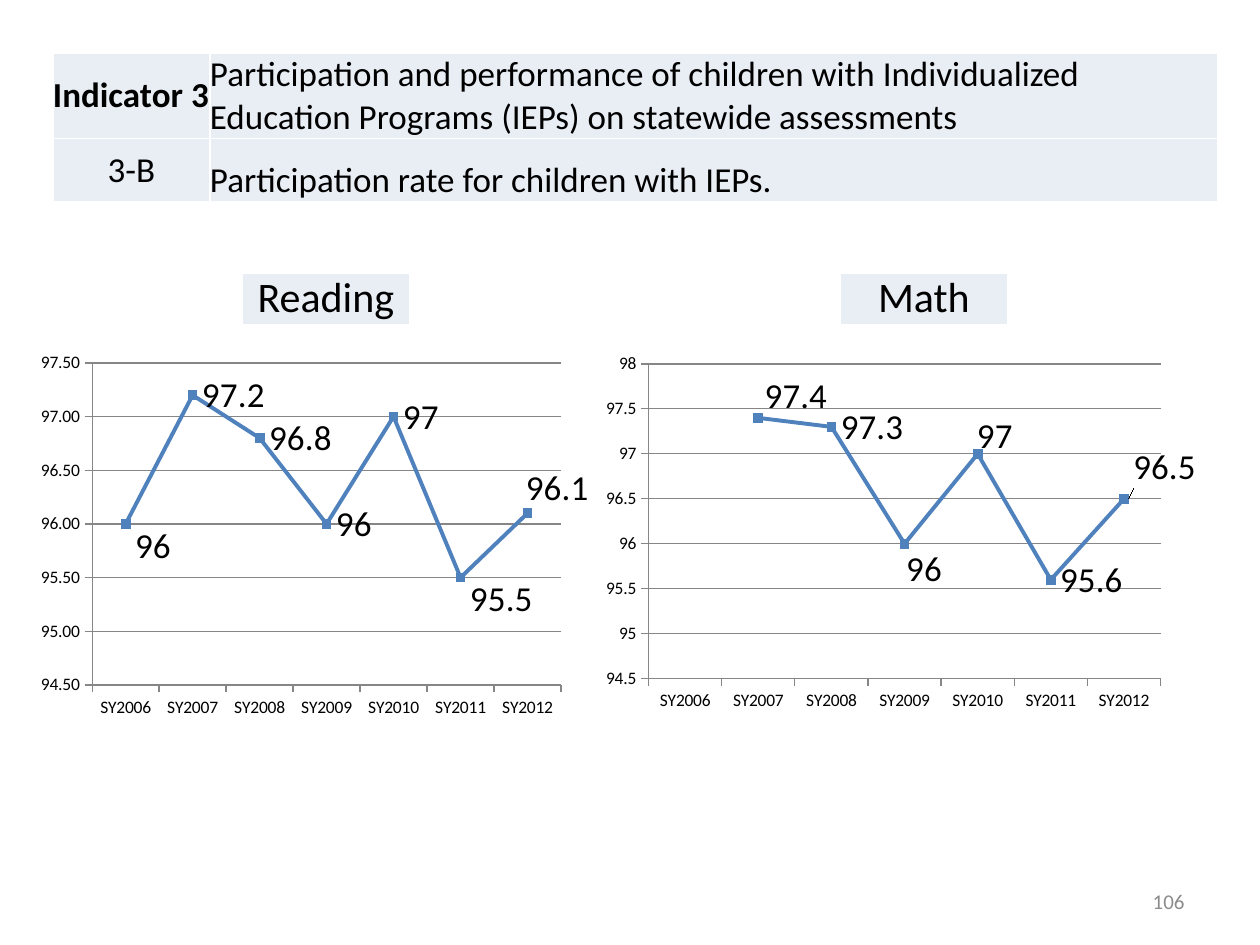
import pptx
import pptx.chart.data
import pptx.dml.color
import pptx.enum.chart
import pptx.enum.text
import pptx.oxml
import pptx.oxml.ns
import pptx.util

BLACK = pptx.dml.color.RGBColor(0x00, 0x00, 0x00)
GREY = pptx.dml.color.RGBColor(0x8C, 0x8C, 0x8C)
AXIS_GREY = pptx.dml.color.RGBColor(0x86, 0x86, 0x86)
PALE_BLUE = pptx.dml.color.RGBColor(0xE9, 0xED, 0xF4)
BLUE = pptx.dml.color.RGBColor(0x4F, 0x81, 0xBD)

FONT = "Calibri"
PX = 914400 // 126
ALIGN = pptx.enum.text.PP_ALIGN
ANCHOR = pptx.enum.text.MSO_ANCHOR
YEARS = [f"SY{year}" for year in range(2006, 2013)]


class SlideBuilder:
    """Holds the style and the current slide."""

    def __init__(self, slide):
        self.slide = slide

    def scale(self, *lengths):
        return [pptx.util.Emu(length * PX) for length in lengths]

    def style_font(self, font, size, color=BLACK, bold=False):
        font.name = FONT
        font.size = pptx.util.Pt(size)
        font.color.rgb = color
        font.bold = bold

    def table(self, left, top, columns, heights, rows, size):
        """Each cell is (text, alignment, anchor, bold)."""
        frame = self.slide.shapes.add_table(
            len(heights), len(columns),
            *self.scale(left, top, sum(columns), sum(heights)))
        table = frame.table
        table.first_row = table.horz_banding = False
        for column, width in zip(table.columns, self.scale(*columns)):
            column.width = width
        for row, height, cells in zip(table.rows, self.scale(*heights), rows):
            row.height = height
            for cell, (text, align, anchor, bold) in zip(row.cells, cells):
                cell.fill.solid()
                cell.fill.fore_color.rgb = PALE_BLUE
                cell.margin_left = cell.margin_right = 0
                cell.margin_top = cell.margin_bottom = 0
                cell.vertical_anchor = anchor
                cell.text = text
                para = cell.text_frame.paragraphs[0]
                para.alignment = align
                self.style_font(para.font, size, bold=bold)

    def text(self, left, top, width, height, text, size, color, align):
        box = self.slide.shapes.add_textbox(*self.scale(left, top, width, height))
        box.text_frame.word_wrap = True
        box.text_frame.vertical_anchor = ANCHOR.MIDDLE
        para = box.text_frame.paragraphs[0]
        para.text = text
        para.alignment = align
        self.style_font(para.font, size, color)

    def layout_xml(self, body):
        return pptx.oxml.parse_xml(
            f'<c:layout {pptx.oxml.ns.nsdecls("c")}>'
            f"<c:manualLayout>{body}</c:manualLayout></c:layout>")

    def line_chart(self, left, top, width, height, values, maximum,
                   axis_format, plot_box, label_shifts):
        """plot_box is in slide px; label_shifts maps a point to (dx, dy) px."""
        data = pptx.chart.data.CategoryChartData()
        data.categories = YEARS
        data.add_series("Series 1", values)
        chart = self.slide.shapes.add_chart(
            pptx.enum.chart.XL_CHART_TYPE.LINE_MARKERS,
            *self.scale(left, top, width, height), data).chart
        chart.has_legend = chart.has_title = False
        self.style_font(chart.font, 10)

        # Axes and gridlines
        axis = chart.value_axis
        axis.minimum_scale, axis.maximum_scale = 94.5, maximum
        axis.major_unit = 0.5
        axis.tick_labels.number_format = axis_format
        axis.tick_labels.number_format_is_linked = False
        for line in (axis.format.line, axis.major_gridlines.format.line,
                     chart.category_axis.format.line):
            line.color.rgb = AXIS_GREY
            line.width = pptx.util.Pt(0.75)
        for each in (axis, chart.category_axis):
            each.major_tick_mark = pptx.enum.chart.XL_TICK_MARK.OUTSIDE

        # Line and markers
        plot = chart.plots[0]
        plot.vary_by_categories = False
        series = plot.series[0]
        series.smooth = False
        series.format.line.color.rgb = BLUE
        series.format.line.width = pptx.util.Pt(2.25)
        series.marker.style = pptx.enum.chart.XL_MARKER_STYLE.SQUARE
        series.marker.size = 5
        series.marker.format.fill.solid()
        series.marker.format.fill.fore_color.rgb = BLUE
        series.marker.format.line.color.rgb = BLUE

        # Value labels, some moved off the line
        right = pptx.enum.chart.XL_LABEL_POSITION.RIGHT
        labels = series.data_labels
        labels.show_value = True
        labels.position = right
        self.style_font(labels.font, 20)
        for index, (dx, dy) in label_shifts.items():
            label = series.points[index].data_label
            self.style_font(label.font, 20)
            label.position = right
            element = series._element.xpath(
                f'c:dLbls/c:dLbl[c:idx/@val="{index}"]')[0]
            element.insert(1, self.layout_xml(
                f'<c:x val="{dx / width:.3f}"/><c:y val="{dy / height:.3f}"/>'))

        # Inner plot area
        x, y, w, h = plot_box
        parts = {"x": (x - left) / width, "y": (y - top) / height,
                 "w": w / width, "h": h / height}
        body = '<c:layoutTarget val="inner"/><c:xMode val="edge"/><c:yMode val="edge"/>'
        body += "".join(f'<c:{key} val="{part:.3f}"/>' for key, part in parts.items())
        area = chart._chartSpace.xpath("c:chart/c:plotArea")[0]
        for old in area.xpath("c:layout"):
            area.remove(old)
        area.insert(0, self.layout_xml(body))


def main():
    deck = pptx.Presentation()
    deck.slide_width = pptx.util.Inches(10)
    deck.slide_height = pptx.util.Inches(7.5)
    builder = SlideBuilder(deck.slides.add_slide(deck.slide_layouts[6]))

    # Indicator heading
    builder.table(53, 53, [157, 1008], [85, 63], [
        [("Indicator 3", ALIGN.LEFT, ANCHOR.MIDDLE, True),
         ("Participation and performance of children with Individualized "
          "Education Programs (IEPs) on statewide assessments",
          ALIGN.LEFT, ANCHOR.BOTTOM, False)],
        [("3-B", ALIGN.CENTER, ANCHOR.MIDDLE, False),
         ("Participation rate for children with IEPs.",
          ALIGN.LEFT, ANCHOR.BOTTOM, False)],
    ], 20)

    # Subject headings
    for left, subject in ((242, "Reading"), (840, "Math")):
        builder.table(left, 273, [168], [50],
                      [[(subject, ALIGN.CENTER, ANCHOR.BOTTOM, False)]], 24)

    # Participation rates
    builder.line_chart(
        32, 346, 557, 378, [96, 97.2, 96.8, 96, 97, 95.5, 96.1], 97.5, "0.00",
        (92, 363, 469, 322), {0: (0, 22), 5: (0, 22), 6: (-11, -25)})
    builder.line_chart(
        598, 336, 598, 378, [None, 97.4, 97.3, 96, 97, 95.6, 96.5], 98, "General",
        (649, 364, 514, 315),
        {1: (-3, -22), 3: (-8, 25), 4: (-10, -18), 6: (0, -32)})

    # Page number
    builder.text(903, 876, 294, 50, "106", 12, GREY, ALIGN.RIGHT)

    deck.save("out.pptx")


if __name__ == "__main__":
    main()
